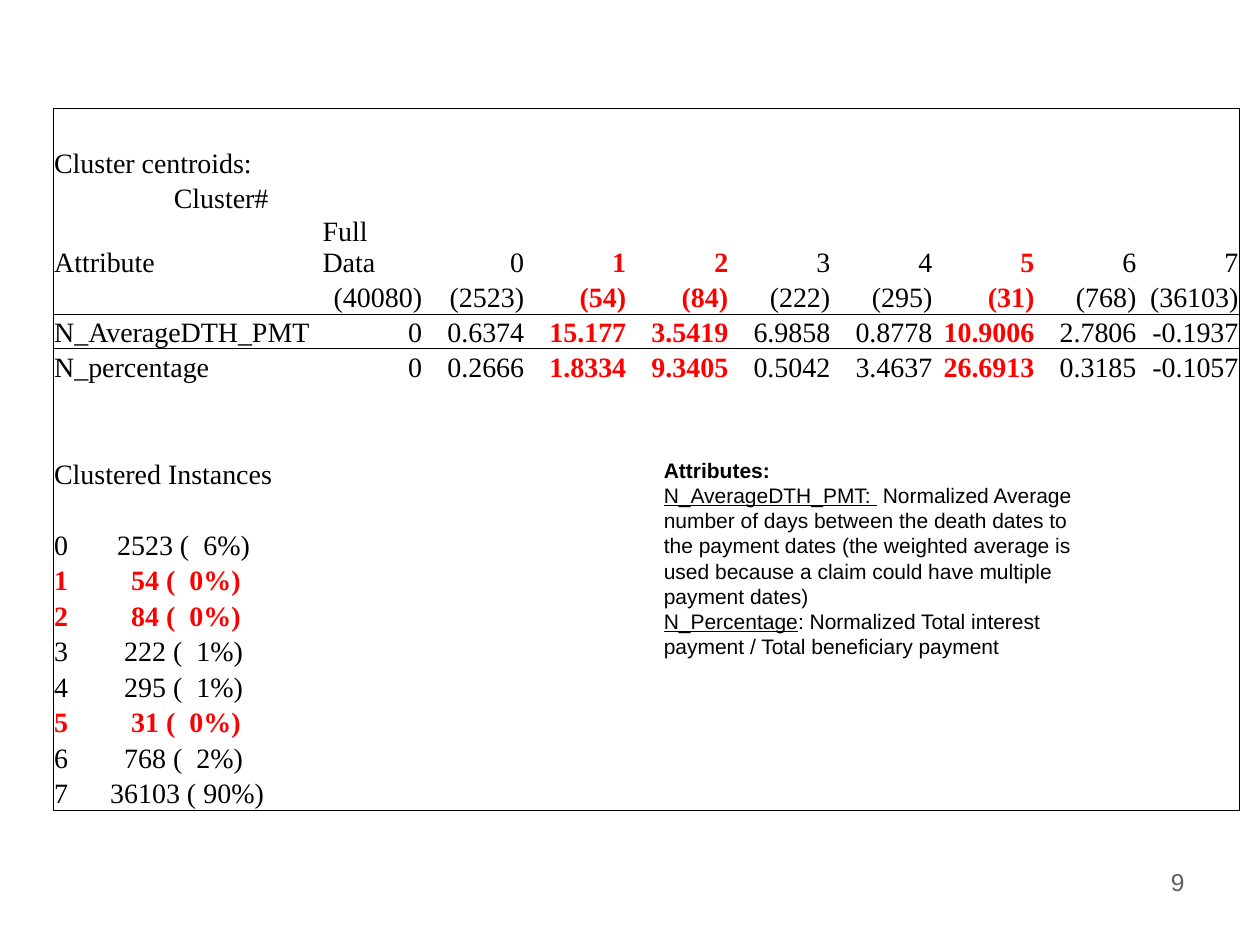
from dataclasses import dataclass

from lxml import etree
from pptx import Presentation
from pptx import util as u
from pptx.dml.color import RGBColor
from pptx.enum import text
from pptx.oxml import ns


@dataclass(frozen=True)
class Theme:
    table_font: str = "Times New Roman"
    note_font: str = "Arial"
    ink: str = "000000"
    highlight: str = "FF0000"
    muted: str = "5F5F5F"
    table_size: int = 16
    note_size: int = 12
    number_size: int = 14
    border: float = 0.5


@dataclass(frozen=True)
class Cluster:
    name: str
    count: str
    payment_delay: str
    percentage: str
    share: str
    outlier: bool = False


@dataclass(frozen=True)
class Run:
    words: str
    bold: bool = False
    underline: bool = False


THEME = Theme()
NO_STYLE_NO_GRID = "{2D5ABB26-0587-4C30-8999-92F81FD0307C}"
ROW_COUNT = 19
COLUMN_WIDTHS = [0.95, 1.18] + [0.81] * 9
HEADER_ROW, COUNT_ROW, DELAY_ROW, PERCENTAGE_ROW = 3, 4, 5, 6
INSTANCE_ROW = 11
# Widths of Times characters at 16 pt
DIGIT, SPACE, BRACKET = 8, 4, 5.33

CLUSTERS = [
    Cluster("0", "2523", "0.6374", "0.2666", "6%"),
    Cluster("1", "54", "15.177", "1.8334", "0%", True),
    Cluster("2", "84", "3.5419", "9.3405", "0%", True),
    Cluster("3", "222", "6.9858", "0.5042", "1%"),
    Cluster("4", "295", "0.8778", "3.4637", "1%"),
    Cluster("5", "31", "10.9006", "26.6913", "0%", True),
    Cluster("6", "768", "2.7806", "0.3185", "2%"),
    Cluster("7", "36103", "-0.1937", "-0.1057", "90%"),
]
LABELS = [
    (1, 0, "Cluster centroids:"),
    (2, 1, "Cluster#"),
    (HEADER_ROW, 0, "Attribute"),
    (HEADER_ROW, 2, "Full Data"),
    (DELAY_ROW, 0, "N_AverageDTH_PMT"),
    (PERCENTAGE_ROW, 0, "N_percentage"),
    (9, 0, "Clustered Instances"),
]
FULL_DATA = [(COUNT_ROW, "(40080)"), (DELAY_ROW, "0"), (PERCENTAGE_ROW, "0")]
NOTE = [
    [Run("Attributes:", bold=True)],
    [Run("N_AverageDTH_PMT: ", underline=True),
     Run(" Normalized Average number of days between the death dates to the payment "
         "dates (the weighted average is used because a claim could have multiple "
         "payment dates)")],
    [Run("N_Percentage", underline=True),
     Run(": Normalized Total interest payment / Total beneficiary payment")],
]


def add_run(paragraph, run: Run, font: str, size: int, color: str) -> None:
    item = paragraph.add_run()
    item.text = run.words
    item.font.name, item.font.size = font, u.Pt(size)
    item.font.bold, item.font.underline = run.bold, run.underline
    item.font.color.rgb = RGBColor.from_string(color)


def add_border(cell, side: str) -> None:
    properties = cell._tc.get_or_add_tcPr()
    line = etree.SubElement(properties, ns.qn(f"a:ln{side}"), w=str(u.Pt(THEME.border)))
    fill = etree.SubElement(line, ns.qn("a:solidFill"))
    etree.SubElement(fill, ns.qn("a:srgbClr"), val=THEME.ink)


def prepare_cell(cell, row: int, column: int) -> None:
    """Set insets, the outer frame, the header rule and the empty-line size."""
    cell.margin_left = cell.margin_right = cell.margin_top = u.Inches(0.01)
    cell.margin_bottom = 0
    cell.vertical_anchor = text.MSO_ANCHOR.BOTTOM
    sides = {
        "L": column == 0,
        "R": column == len(COLUMN_WIDTHS) - 1,
        "T": row in (0, DELAY_ROW),
        "B": row in (COUNT_ROW, ROW_COUNT - 1),
    }
    for side, shown in sides.items():
        if shown:
            add_border(cell, side)
    cell.fill.background()
    etree.SubElement(cell.text_frame.paragraphs[0]._p, ns.qn("a:endParaRPr"),
                     sz=str(THEME.table_size * 100))


def write_cell(cell, words: str, right: bool = False, outlier: bool = False) -> None:
    paragraph = cell.text_frame.paragraphs[0]
    paragraph.alignment = text.PP_ALIGN.RIGHT if right else text.PP_ALIGN.LEFT
    add_run(paragraph, Run(words, bold=outlier), THEME.table_font, THEME.table_size,
            THEME.highlight if outlier else THEME.ink)


def write_instances(cell, cluster: Cluster) -> None:
    """Write name, count and share on tab stops that follow the digit widths."""
    digits = len(cluster.count)
    count_stop = 52 - SPACE * digits
    padding = SPACE * (4 - len(cluster.share))
    share_stop = count_stop + DIGIT * digits + SPACE + BRACKET + padding
    properties = cell.text_frame.paragraphs[0]._p.get_or_add_pPr()
    stops = etree.SubElement(properties, ns.qn("a:tabLst"))
    for stop in (count_stop, share_stop):
        etree.SubElement(stops, ns.qn("a:tab"), pos=str(u.Pt(stop)), algn="l")
    write_cell(cell, f"{cluster.name}\t{cluster.count} (\t{cluster.share})",
               outlier=cluster.outlier)


def add_cluster_table(slide) -> None:
    row_height = u.Pt(20)
    frame = slide.shapes.add_table(
        ROW_COUNT, len(COLUMN_WIDTHS), u.Inches(0.42), u.Inches(0.86),
        u.Inches(sum(COLUMN_WIDTHS)), row_height * ROW_COUNT)
    table = frame.table
    table.first_row = table.horz_banding = False
    table._tbl.tblPr.find(ns.qn("a:tableStyleId")).text = NO_STYLE_NO_GRID
    for column, width in zip(table.columns, COLUMN_WIDTHS):
        column.width = u.Inches(width)
    for row_index, row in enumerate(table.rows):
        row.height = row_height
        for column_index, cell in enumerate(row.cells):
            prepare_cell(cell, row_index, column_index)

    # Labels that need the first two columns
    wide_rows = [1, DELAY_ROW, PERCENTAGE_ROW, 9, *range(INSTANCE_ROW, ROW_COUNT)]
    for row_index in wide_rows:
        table.cell(row_index, 0).merge(table.cell(row_index, 1))
    for row_index, column_index, words in LABELS:
        write_cell(table.cell(row_index, column_index), words)

    # Centroids, then the instances of each cluster
    for row_index, words in FULL_DATA:
        write_cell(table.cell(row_index, 2), words, right=True)
    for index, cluster in enumerate(CLUSTERS):
        values = (cluster.name, f"({cluster.count})", cluster.payment_delay,
                  cluster.percentage)
        for row_index, words in enumerate(values, HEADER_ROW):
            write_cell(table.cell(row_index, index + 3), words, True, cluster.outlier)
        write_instances(table.cell(INSTANCE_ROW + index, 0), cluster)


def add_text(slide, box: tuple[float, ...], lines: list[list[Run]], size: int,
             color: str, alignment=text.PP_ALIGN.LEFT) -> None:
    frame = slide.shapes.add_textbox(*map(u.Inches, box)).text_frame
    frame.word_wrap = True
    for index, line in enumerate(lines):
        paragraph = frame.add_paragraph() if index else frame.paragraphs[0]
        paragraph.alignment = alignment
        for run in line:
            add_run(paragraph, run, THEME.note_font, size, color)


def main() -> None:
    presentation = Presentation()
    presentation.slide_width, presentation.slide_height = u.Inches(10), u.Inches(7.5)
    slide = presentation.slides.add_slide(presentation.slide_layouts[6])
    add_cluster_table(slide)
    # Slide number and attribute note
    add_text(slide, (7.17, 6.83, 2.33, 0.52), [[Run("9")]], THEME.number_size,
             THEME.muted, text.PP_ALIGN.RIGHT)
    add_text(slide, (5.17, 3.58, 3.58, 2.12), NOTE, THEME.note_size, THEME.ink)
    presentation.save("out.pptx")


if __name__ == "__main__":
    main()
